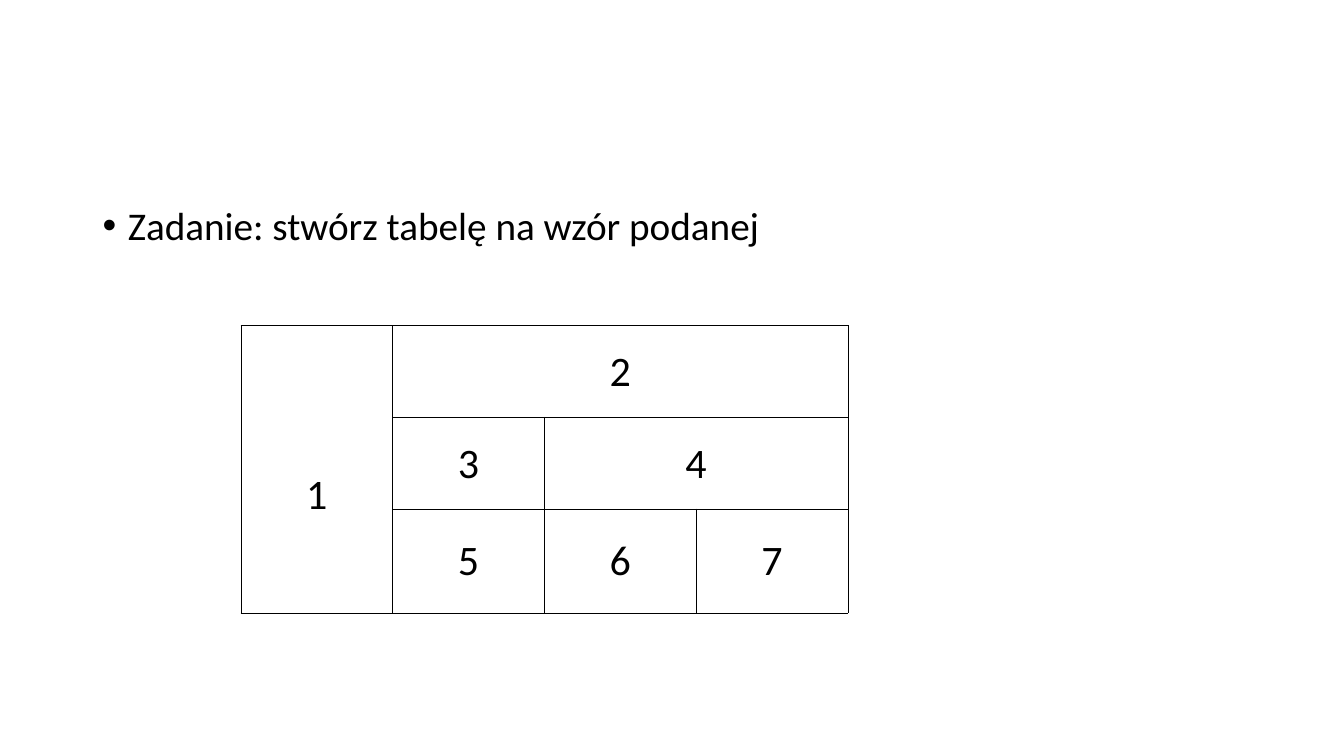
from pptx import Presentation
from pptx.dml.color import RGBColor
from pptx.enum.text import MSO_ANCHOR, PP_ALIGN
from pptx.oxml import parse_xml
from pptx.oxml.ns import nsdecls
from pptx.util import Inches, Pt

BLACK = RGBColor(0x00, 0x00, 0x00)

# Label, first row and column, last row and column
CELLS = [
    ("1", 0, 0, 2, 0),
    ("2", 0, 1, 0, 3),
    ("3", 1, 1, 1, 1),
    ("4", 1, 2, 1, 3),
    ("5", 2, 1, 2, 1),
    ("6", 2, 2, 2, 2),
    ("7", 2, 3, 2, 3),
]
ROW_HEIGHTS = (0.91, 0.91, 1.03)
COLUMNS = 4


class SlideBuilder:
    font = "Calibri"
    color = BLACK
    border = Pt(0.5)

    def __init__(self, prs):
        self.s = prs.slides.add_slide(prs.slide_layouts[6])

    def style(self, p, text, size):
        p.text = text
        p.font.name = self.font
        p.font.size = Pt(size)
        p.font.color.rgb = self.color

    def bullet(self, text, left, top, width, height):
        sp = self.s.shapes.add_textbox(
            Inches(left), Inches(top), Inches(width), Inches(height))
        tf = sp.text_frame
        tf.word_wrap = True
        p = tf.paragraphs[0]
        self.style(p, text, 28)
        p.line_spacing = 0.9
        p.space_before = Pt(10)
        pPr = p._p.get_or_add_pPr()
        pPr.set("marL", str(Inches(0.25)))
        pPr.set("indent", str(-Inches(0.25)))
        # Bullet elements go just before the default run properties
        for tag in (f'<a:buFont {nsdecls("a")} typeface="Arial"/>',
                    f'<a:buChar {nsdecls("a")} char="•"/>'):
            pPr.insert(len(pPr) - 1, parse_xml(tag))

    def table(self, left, top, width):
        table = self.s.shapes.add_table(
            len(ROW_HEIGHTS), COLUMNS, Inches(left), Inches(top),
            Inches(width), Inches(sum(ROW_HEIGHTS))).table
        table.first_row = table.horz_banding = False
        for row, height in zip(table.rows, ROW_HEIGHTS):
            row.height = Inches(height)
        for cell in table.iter_cells():
            self.frame(cell)
        for text, row, col, last_row, last_col in CELLS:
            cell = table.cell(row, col)
            if (row, col) != (last_row, last_col):
                cell.merge(table.cell(last_row, last_col))
            p = cell.text_frame.paragraphs[0]
            self.style(p, text, 30)
            p.alignment = PP_ALIGN.CENTER
        # The tall first cell holds its number below the middle
        table.cell(0, 0).margin_top = Inches(0.51)

    def frame(self, cell):
        cell.margin_left = cell.margin_right = cell.margin_top = Inches(0.01)
        cell.margin_bottom = 0
        cell.vertical_anchor = MSO_ANCHOR.MIDDLE
        cell.fill.background()
        tcPr = cell._tc.get_or_add_tcPr()
        for i, side in enumerate(("lnL", "lnR", "lnT", "lnB")):
            tcPr.insert(i, parse_xml(
                f'<a:{side} {nsdecls("a")} w="{self.border}"><a:solidFill>'
                f'<a:srgbClr val="{self.color}"/></a:solidFill></a:{side}>'))


def main():
    prs = Presentation()
    prs.slide_width, prs.slide_height = Inches(13.33), Inches(7.5)
    slide = SlideBuilder(prs)

    # Task
    slide.bullet("Zadanie: stwórz tabelę na wzór podanej", 0.92, 2, 11.5, 4.76)

    # Sample table
    slide.table(2.39, 3.23, 6.02)

    prs.save("out.pptx")


if __name__ == "__main__":
    main()
